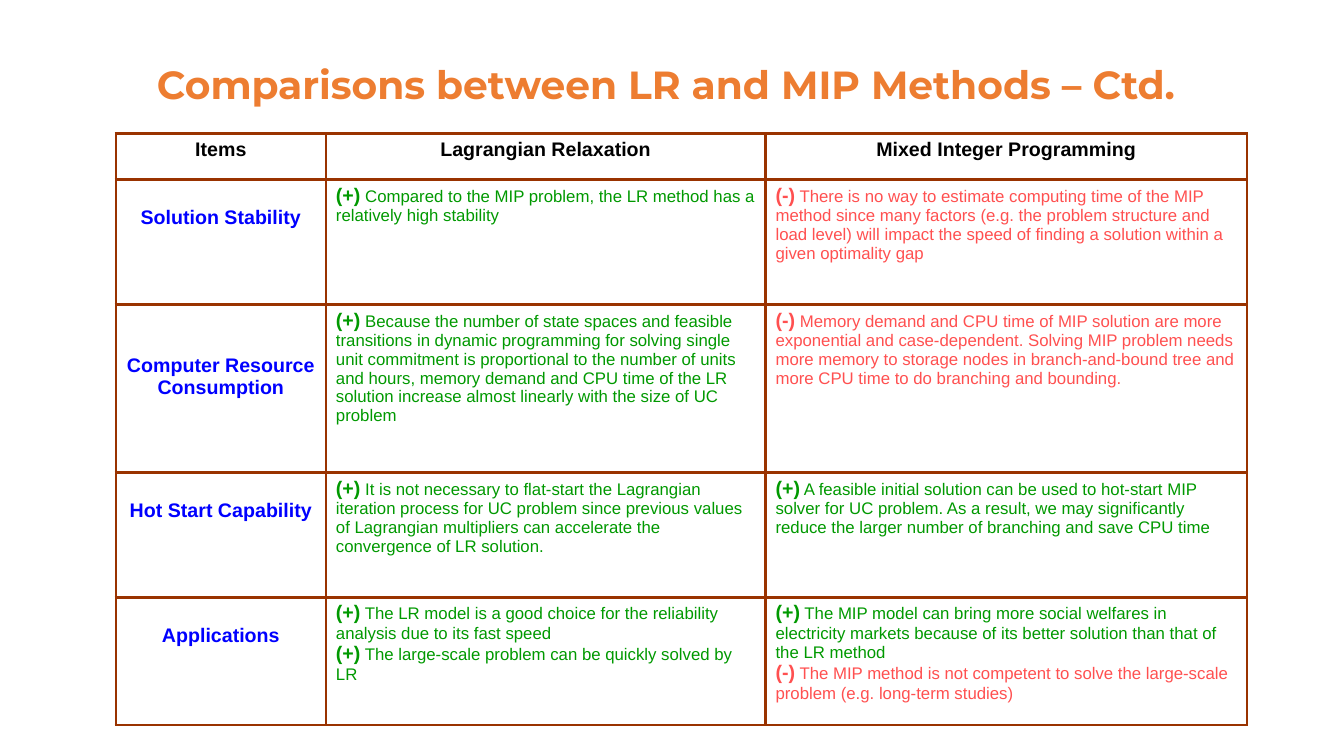
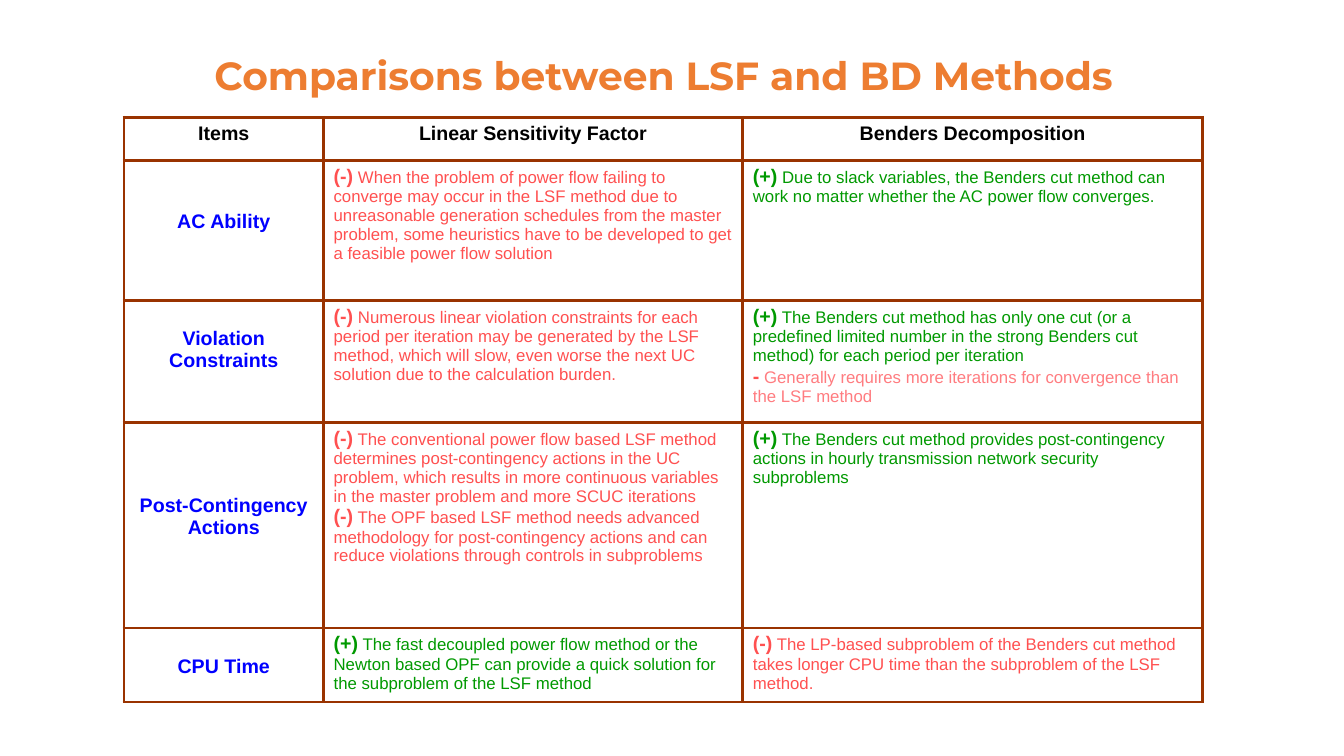
import pptx
import pptx.dml.color
import pptx.enum.text
import pptx.oxml.ns
import pptx.util
from lxml import etree

Pt = pptx.util.Pt
RGBColor = pptx.dml.color.RGBColor
Align = pptx.enum.text.PP_ALIGN
Anchor = pptx.enum.text.MSO_ANCHOR

# Shared style
ORANGE = RGBColor(0xED, 0x7D, 0x31)
BROWN = RGBColor(0x99, 0x33, 0x00)
BLACK = RGBColor(0x00, 0x00, 0x00)
BLUE = RGBColor(0x00, 0x00, 0xFF)
GREEN = RGBColor(0x00, 0x99, 0x00)
RED = RGBColor(0xFF, 0x50, 0x50)
PINK = RGBColor(0xFF, 0x7C, 0x80)
TITLE_FONT = "Montserrat"
BODY_FONT = "Arial"
LABEL_SIZE = 14
DETAIL_SIZE = 12
LABEL_LINE = 16.1
CELL_MARGIN = 3.6
BORDER_WIDTH = 2.25

# Colours of the mark and of the words after it
MARK_COLORS = {"(+)": (GREEN, GREEN), "(-)": (RED, RED), "-": (RED, PINK)}

# Each row: label, lines the label is lowered by, left points, right points
LR_MIP_HEADERS = ["Items", "Lagrangian Relaxation", "Mixed Integer Programming"]
LR_MIP_ROWS = [
    ("Solution Stability", 1,
     [("(+)", "Compared to the MIP problem, the LR method has a relatively high stability")],
     [("(-)", "There is no way to estimate computing time of the MIP method since many factors "
              "(e.g. the problem structure and load level) will impact the speed of finding a "
              "solution within a given optimality gap")]),
    ("Computer Resource Consumption", 2,
     [("(+)", "Because the number of state spaces and feasible transitions in dynamic programming "
              "for solving single unit commitment is proportional to the number of units and hours, "
              "memory demand and CPU time of the LR solution increase almost linearly with the size "
              "of UC problem")],
     [("(-)", "Memory demand and CPU time of MIP solution are more exponential and case-dependent. "
              "Solving MIP problem needs more memory to storage nodes in branch-and-bound tree and "
              "more CPU time to do branching and bounding.")]),
    ("Hot Start Capability", 1,
     [("(+)", "It is not necessary to flat-start the Lagrangian iteration process for UC problem "
              "since previous values of Lagrangian multipliers can accelerate the convergence of "
              "LR solution.")],
     [("(+)", "A feasible initial solution can be used to hot-start MIP solver for UC problem. As a "
              "result, we may significantly reduce the larger number of branching and save CPU time")]),
    ("Applications", 1,
     [("(+)", "The LR model is a good choice for the reliability analysis due to its fast speed"),
      ("(+)", "The large-scale problem can be quickly solved by LR")],
     [("(+)", "The MIP model can bring more social welfares in electricity markets because of its "
              "better solution than that of the LR method"),
      ("(-)", "The MIP method is not competent to solve the large-scale problem "
              "(e.g. long-term studies)")]),
]

LSF_BD_HEADERS = ["Items", "Linear Sensitivity Factor", "Benders Decomposition"]
LSF_BD_ROWS = [
    ("AC Ability", 2,
     [("(-)", "When the problem of power flow failing to converge may occur in the LSF method due "
              "to unreasonable generation schedules from the master problem, some heuristics have "
              "to be developed to get a feasible power flow solution")],
     [("(+)", "Due to slack variables, the Benders cut method can work no matter whether the AC "
              "power flow converges.")]),
    ("Violation Constraints", 1,
     [("(-)", "Numerous linear violation constraints for each period per iteration may be generated "
              "by the LSF method, which will slow, even worse the next UC solution due to the "
              "calculation burden.")],
     [("(+)", "The Benders cut method has only one cut (or a predefined limited number in the strong "
              "Benders cut method) for each period per iteration"),
      ("-", "Generally requires more iterations for convergence than the LSF method")]),
    ("Post-Contingency Actions", 3,
     [("(-)", "The conventional power flow based LSF method determines post-contingency actions in "
              "the UC problem, which results in more continuous variables in the master problem and "
              "more SCUC iterations"),
      ("(-)", "The OPF based LSF method needs advanced methodology for post-contingency actions and "
              "can reduce violations through controls in subproblems")],
     [("(+)", "The Benders cut method provides post-contingency actions in hourly transmission "
              "network security subproblems")]),
    ("CPU Time", 1,
     [("(+)", "The fast decoupled power flow method or the Newton based OPF can provide a quick "
              "solution for the subproblem of the LSF method")],
     [("(-)", "The LP-based subproblem of the Benders cut method takes longer CPU time than the "
              "subproblem of the LSF method.")]),
]


def write_span(para, text, size=LABEL_SIZE, color=BLACK, bold=True, font=BODY_FONT, align=None):
    span = para.add_run()
    span.text = text
    span.font.size = Pt(size)
    span.font.color.rgb = color
    span.font.bold = bold
    span.font.name = font
    if align is not None:
        para.alignment = align


def add_title(page, text, left, top, width, align):
    box = page.shapes.add_textbox(Pt(left), Pt(top), Pt(width), Pt(36))
    frame = box.text_frame
    frame.word_wrap = True
    frame.vertical_anchor = Anchor.BOTTOM
    write_span(frame.paragraphs[0], text, size=28, color=ORANGE, font=TITLE_FONT, align=align)


def style_cell(cell):
    """Clear the fill and draw the four borders."""
    cell.fill.background()
    properties = cell._tc.get_or_add_tcPr()
    qn = pptx.oxml.ns.qn
    for position, side in enumerate(("a:lnL", "a:lnR", "a:lnT", "a:lnB")):
        line = etree.Element(qn(side), w=str(Pt(BORDER_WIDTH)))
        fill = etree.SubElement(line, qn("a:solidFill"))
        etree.SubElement(fill, qn("a:srgbClr"), val=str(BROWN))
        properties.insert(position, line)


def write_label(cell, text, color=BLACK, lowered=0):
    cell.margin_top = Pt(CELL_MARGIN + lowered * LABEL_LINE)
    write_span(cell.text_frame.paragraphs[0], text, color=color, align=Align.CENTER)


def write_points(cell, points):
    frame = cell.text_frame
    for index, (mark, text) in enumerate(points):
        para = frame.add_paragraph() if index else frame.paragraphs[0]
        mark_color, text_color = MARK_COLORS[mark]
        write_span(para, mark, color=mark_color)
        write_span(para, " " + text, size=DETAIL_SIZE, color=text_color, bold=False)


def add_comparison(page, headers, rows, left, top, widths, heights):
    holder = page.shapes.add_table(len(heights), len(widths), Pt(left), Pt(top),
                                   Pt(sum(widths)), Pt(sum(heights)))
    table = holder.table
    table.first_row = table.horz_banding = False
    for column, width in zip(table.columns, widths):
        column.width = Pt(width)
    for row, height in zip(table.rows, heights):
        row.height = Pt(height)
    for cell in table.iter_cells():
        style_cell(cell)
    for index, header in enumerate(headers):
        write_label(table.cell(0, index), header)
    for index, (label, lowered, *sides) in enumerate(rows, start=1):
        write_label(table.cell(index, 0), label, color=BLUE, lowered=lowered)
        for column, points in enumerate(sides, start=1):
            write_points(table.cell(index, column), points)


def main():
    deck = pptx.Presentation()
    deck.slide_width, deck.slide_height = Pt(960), Pt(540)
    blank = deck.slide_layouts[6]

    # LR and MIP
    page = deck.slides.add_slide(blank)
    add_title(page, "Comparisons between LR and MIP Methods – Ctd.", 105, 44.5, 763, Align.LEFT)
    add_comparison(page, LR_MIP_HEADERS, LR_MIP_ROWS, 82.8, 95.5,
                   widths=[150, 314, 344], heights=[32.8, 89, 120.3, 89, 91.4])

    # LSF and BD
    page = deck.slides.add_slide(blank)
    add_title(page, "Comparisons between LSF and BD Methods", 117, 37.5, 714, Align.CENTER)
    add_comparison(page, LSF_BD_HEADERS, LSF_BD_ROWS, 88.6, 83.7,
                   widths=[142.5, 299.5, 328.5], heights=[31, 100, 87, 147, 52])

    deck.save("out.pptx")


if __name__ == "__main__":
    main()
